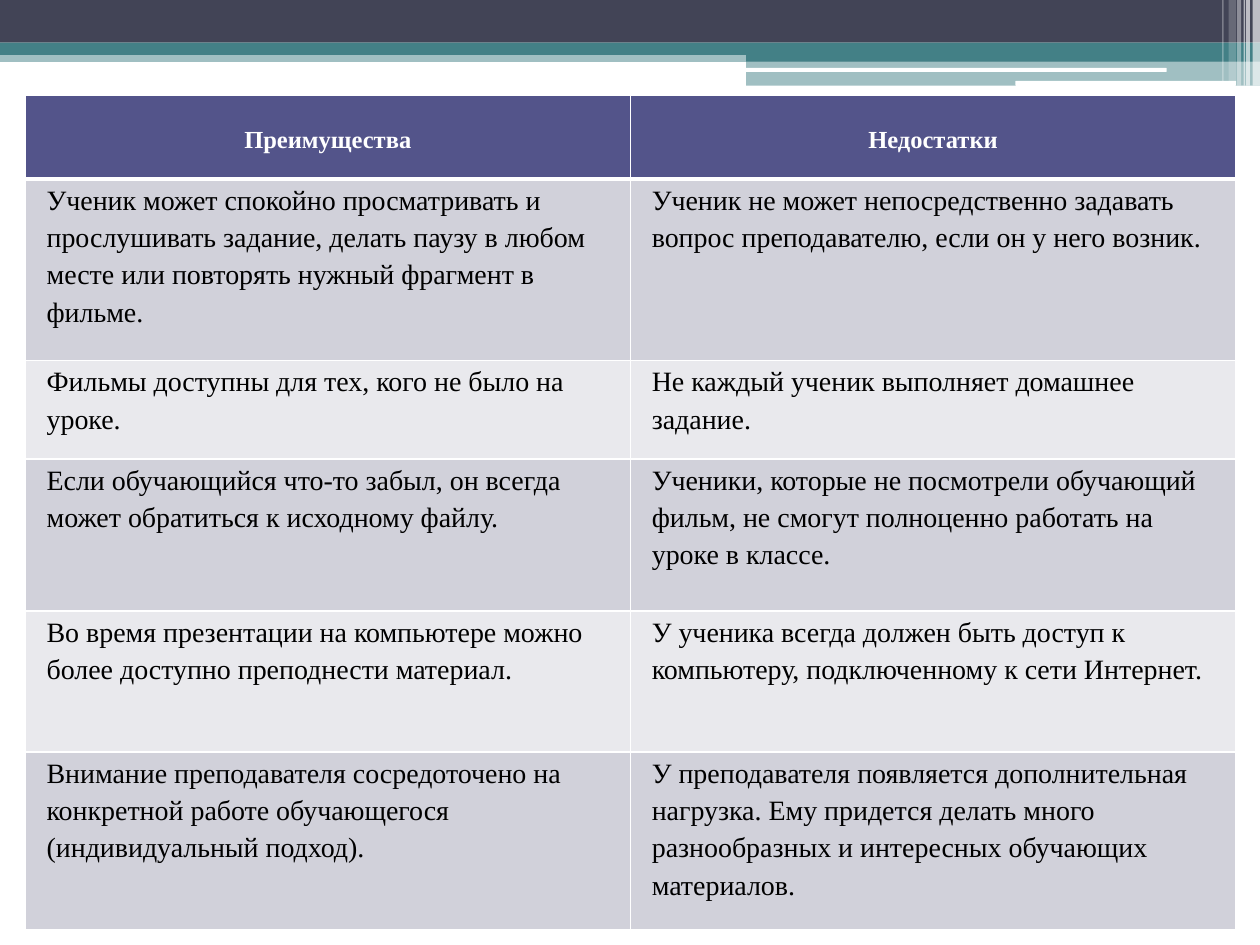
from lxml import etree
from pptx import Presentation
from pptx.dml.color import RGBColor
from pptx.enum.shapes import MSO_SHAPE
from pptx.enum.text import MSO_ANCHOR, PP_ALIGN
from pptx.oxml.ns import qn
from pptx.util import Cm, Pt

RECT, ROUNDED = MSO_SHAPE.RECTANGLE, MSO_SHAPE.ROUNDED_RECTANGLE
MIDDLE, TOP = MSO_ANCHOR.MIDDLE, MSO_ANCHOR.TOP
CENTER, LEFT = PP_ALIGN.CENTER, PP_ALIGN.LEFT
FONT = "Times New Roman"
COLORS = {
    "dark": "424456", "teal": "438086", "white": "FFFFFF", "black": "000000",
    "header": "53548A", "odd": "D1D1DA", "even": "E9E9ED",
}
BANDS = [
    (RECT, 0, 1.02, 25.4, 0.23, "teal", 50),
    (RECT, 0, 0, 25.4, 0.86, "dark", 100),
    (RECT, 0, 0.86, 25.4, 0.25, "teal", 100),
    (RECT, 15.04, 0.99, 10.36, 0.25, "teal", 100),
    (RECT, 15.04, 1.22, 10.36, 0.51, "teal", 50),
    (ROUNDED, 15.01, 1.37, 8.51, 0.08, "white", 100),
    (ROUNDED, 20.47, 1.63, 4.45, 0.1, "white", 100),
]
STRIPES = [
    (25.25, 0.15, 1.73, 65), (25.12, 0.08, 1.73, 65), (25.07, 0.03, 1.73, 60),
    (24.94, 0.08, 1.73, 40), (24.77, 0.15, 1.63, 20), (24.64, 0.03, 1.63, 30),
]
COL_WIDTH = 12.2
ROW_HEIGHTS = [1.68, 3.66, 1.98, 3.07, 2.84, 3.58]
ROWS = [
    ("Преимущества", "Недостатки"),
    ("Ученик может спокойно просматривать и прослушивать задание, делать паузу "
     "в любом месте или повторять нужный фрагмент в фильме.",
     "Ученик не может непосредственно задавать вопрос преподавателю, "
     "если он у него возник."),
    ("Фильмы доступны для тех, кого не было на уроке.",
     "Не каждый ученик выполняет домашнее задание."),
    ("Если обучающийся что-то забыл, он всегда может обратиться к исходному файлу.",
     "Ученики, которые не посмотрели обучающий фильм, не смогут полноценно "
     "работать на уроке в классе."),
    ("Во время презентации на компьютере можно более доступно преподнести материал.",
     "У ученика всегда должен быть доступ к компьютеру, "
     "подключенному к сети Интернет."),
    ("Внимание преподавателя сосредоточено на конкретной работе обучающегося "
     "(индивидуальный подход).",
     "У преподавателя появляется дополнительная нагрузка. Ему придется делать "
     "много разнообразных и интересных обучающих материалов."),
]


def rgb(name):
    """Return the named colour."""
    return RGBColor.from_string(COLORS[name])


def add_band(s, kind, x, y, w, h, color, opacity=100):
    """Add a borderless filled shape with the given opacity in percent."""
    sp = s.shapes.add_shape(kind, Cm(x), Cm(y), Cm(w), Cm(h))
    sp.shadow.inherit = False
    sp.line.fill.background()
    sp.fill.solid()
    sp.fill.fore_color.rgb = rgb(color)
    if opacity < 100:
        clr = sp.fill._xPr.find(qn("a:solidFill"))[0]
        etree.SubElement(clr, qn("a:alpha"), val=str(opacity * 1000))


def set_borders(cell, bottom):
    """Draw white cell borders, with the bottom width in points."""
    tc_pr = cell._tc.get_or_add_tcPr()
    widths = {"a:lnL": 1, "a:lnR": 1, "a:lnT": 1, "a:lnB": bottom}
    for i, (tag, width) in enumerate(widths.items()):
        ln = etree.Element(qn(tag), w=str(Pt(width)))
        fill = etree.SubElement(ln, qn("a:solidFill"))
        etree.SubElement(fill, qn("a:srgbClr"), val=COLORS["white"])
        tc_pr.insert(i, ln)


def fill_cell(cell, text, row):
    """Write and format one table cell according to its row."""
    head = row == 0
    cell.fill.solid()
    cell.fill.fore_color.rgb = rgb("header" if head else "odd" if row % 2 else "even")
    cell.margin_left = cell.margin_right = Cm(0.18)
    cell.margin_top = cell.margin_bottom = 0
    cell.vertical_anchor = MIDDLE if head else TOP
    p = cell.text_frame.paragraphs[0]
    p.alignment = CENTER if head else LEFT
    p.line_spacing = 1.2
    if not head:
        p._p.get_or_add_pPr().set("marL", str(Cm(0.25)))
    r = p.add_run()
    r.text = text
    r.font.name = FONT
    r.font.size = Pt(14 if head else 16)
    r.font.bold = head
    r.font.color.rgb = rgb("white" if head else "black")
    set_borders(cell, 3 if row == 0 else 1)


def add_comparison(s):
    """Add the table of advantages and disadvantages."""
    table = s.shapes.add_table(len(ROWS), 2, Cm(0.51), Cm(1.93),
                               Cm(2 * COL_WIDTH), Cm(sum(ROW_HEIGHTS))).table
    for col in table.columns:
        col.width = Cm(COL_WIDTH)
    for i, (texts, height) in enumerate(zip(ROWS, ROW_HEIGHTS)):
        table.rows[i].height = Cm(height)
        for j, text in enumerate(texts):
            fill_cell(table.cell(i, j), text, i)


def main():
    """Build and save the slide."""
    prs = Presentation()
    prs.slide_width, prs.slide_height = Cm(25.4), Cm(19.05)
    s = prs.slides.add_slide(prs.slide_layouts[6])
    for band in BANDS:
        add_band(s, *band)
    for x, w, h, opacity in STRIPES:
        add_band(s, RECT, x, 0, w, h, "white", opacity)
    add_comparison(s)
    prs.save("out.pptx")


if __name__ == "__main__":
    main()
